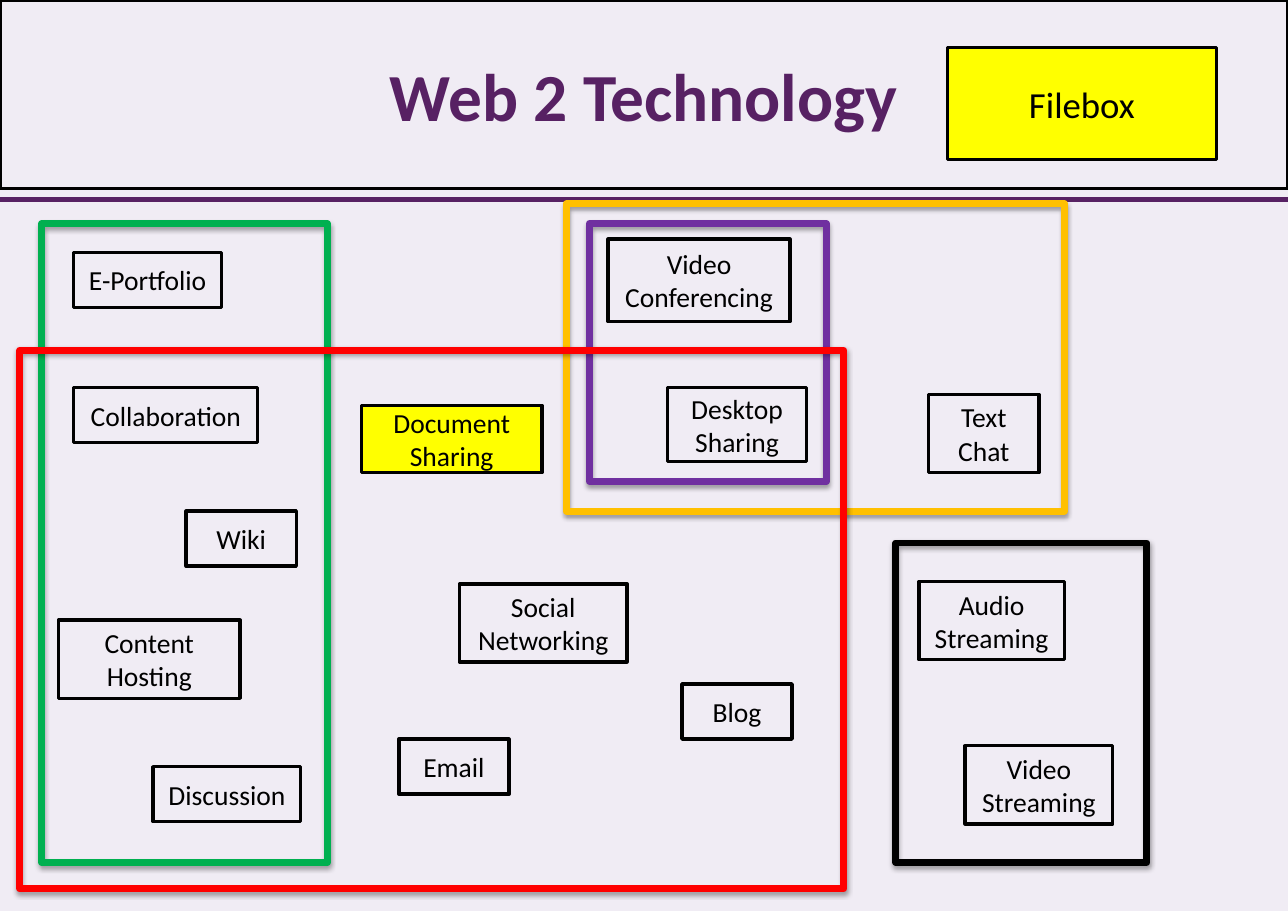
from lxml import etree
from pptx import Presentation
from pptx.dml.color import RGBColor
from pptx.enum.shapes import MSO_CONNECTOR, MSO_SHAPE
from pptx.enum.text import MSO_ANCHOR, MSO_AUTO_SIZE, PP_ALIGN
from pptx.oxml import parse_xml
from pptx.oxml.ns import nsdecls, qn
from pptx.util import Pt

RECT = MSO_SHAPE.RECTANGLE
LINE = MSO_CONNECTOR.STRAIGHT
MIDDLE = MSO_ANCHOR.MIDDLE
CENTER = PP_ALIGN.CENTER
FIXED = MSO_AUTO_SIZE.NONE

PX = 9144  # 100 px to the inch
WIDE, HIGH = 1169, 827
FONT = "Calibri"
COLORS = {
    "page": "F0ECF4",
    "plum": "572163",
    "purple": "7030A0",
    "orange": "FFC000",
    "green": "00B050",
    "red": "FF0000",
    "yellow": "FFFF00",
    "black": "000000",
}
SHADOW = (
    f'<a:effectLst {nsdecls("a")}>'
    '<a:outerShdw blurRad="40000" dist="23000" dir="5400000" rotWithShape="0">'
    '<a:srgbClr val="000000"><a:alpha val="35000"/></a:srgbClr>'
    '</a:outerShdw></a:effectLst>'
)

# Places are measured from the top left of the map area.
FRAMES = [
    ("purple", 535, 22, 215, 234),
    ("orange", 514, 4, 452, 279),
    ("black", 813, 312, 228, 290),
    ("green", 38, 22, 259, 580),
    ("red", 18, 137, 748, 489),
]
TAGS = [
    ("Email", 362, 490, 100, 50),
    ("Text Chat", 843, 177, 100, 71),
    ("Social Networking", 417, 349, 152, 71),
    ("Video Conferencing", 552, 36, 165, 75),
    ("Desktop Sharing", 606, 171, 126, 67),
    ("Audio Streaming", 834, 347, 132, 71),
    ("Video Streaming", 876, 496, 134, 71),
    ("Wiki", 169, 283, 100, 50),
    ("Discussion", 139, 515, 134, 50),
    ("Blog", 619, 440, 100, 50),
    ("E-Portfolio", 67, 48, 134, 50),
    ("Content Hosting", 53, 382, 165, 71),
    ("Collaboration", 67, 171, 167, 50),
]


def rgb(name):
    return RGBColor.from_string(COLORS[name])


def emu(*sizes):
    return [size * PX for size in sizes]


def outline(shape, color, width):
    shape.line.color.rgb = rgb(color)
    shape.line.width = Pt(width)


def write(shape, text, size, color="black", bold=False):
    frame = shape.text_frame
    frame.text = text
    frame.word_wrap = True
    frame.auto_size = FIXED
    frame.vertical_anchor = MIDDLE
    for para in frame.paragraphs:
        para.alignment = CENTER
        for run in para.runs:
            font = run.font
            font.name, font.size, font.bold = FONT, Pt(size), bold
            font.color.rgb = rgb(color)


def add_box(slide, place, color="black", width=2.25, fill=None):
    box = slide.shapes.add_shape(RECT, *emu(*place))
    box.shadow.inherit = False
    outline(box, color, width)
    if fill:
        box.fill.solid()
        box.fill.fore_color.rgb = rgb(fill)
    else:
        box.fill.background()
    return box


def add_frame(slide, place, color):
    """Draw a thick outline with a soft shadow below it."""
    props = add_box(slide, place, color, 4.5)._element.spPr
    props.replace(props.find(qn("a:effectLst")), parse_xml(SHADOW))


def add_rule(slide, left, top, width):
    rule = slide.shapes.add_connector(
        LINE, *emu(left, top, left + width, top))
    outline(rule, "plum", 3.5)
    etree.SubElement(rule._element.spPr, qn("a:effectLst"))


def add_head(slide, left, top, width, height):
    title = slide.shapes.title
    title.left, title.top, title.width, title.height = emu(
        left, top, width, height)
    outline(title, "black", 2.25)
    write(title, "Web 2 Technology", 44, "plum", True)
    add_rule(slide, left, top + height + 10, width)
    badge = add_box(slide, (left + 860, top + 43, 244, 102),
                    width=2, fill="yellow")
    write(badge, "Filebox", 24)


def add_map(slide, left, top):
    for color, x, y, width, height in FRAMES:
        add_frame(slide, (left + x, top + y, width, height), color)
    for text, x, y, width, height in TAGS:
        write(add_box(slide, (left + x, top + y, width, height)), text, 18)
    share = add_box(slide, (left + 328, top + 187, 164, 61), fill="yellow")
    write(share, "Document\nSharing", 18)


def main():
    deck = Presentation()
    deck.slide_width, deck.slide_height = emu(WIDE, HIGH)
    slide = deck.slides.add_slide(deck.slide_layouts[5])
    back = slide.background.fill
    back.solid()
    back.fore_color.rgb = rgb("page")
    add_head(slide, 0, 0, WIDE, 171)
    add_map(slide, 0, 181)
    deck.save("out.pptx")


if __name__ == "__main__":
    main()
